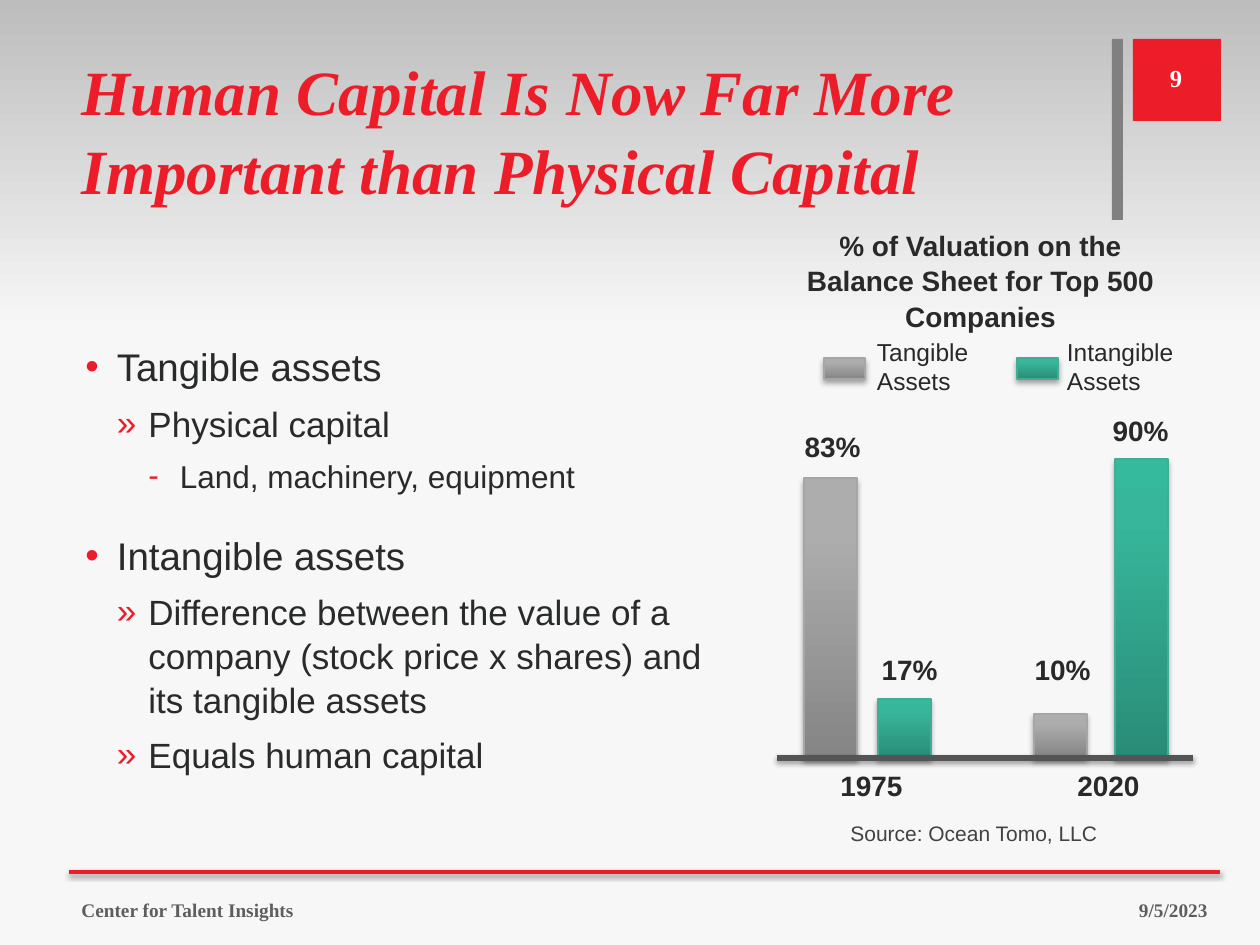
from lxml.etree import SubElement
from pptx import Presentation
from pptx.dml.color import RGBColor
from pptx.enum.shapes import MSO_CONNECTOR as Connector, MSO_SHAPE as Shape
from pptx.enum.text import MSO_ANCHOR as Anchor, PP_ALIGN as Align
from pptx.oxml.ns import qn
from pptx.util import Emu, Pt

RED = RGBColor(0xED, 0x1C, 0x29)
WHITE = RGBColor(0xFF, 0xFF, 0xFF)
BLACK = RGBColor(0x00, 0x00, 0x00)
BAR_GRAY = RGBColor(0x80, 0x80, 0x80)
FOOTER_GRAY = RGBColor(0x5E, 0x5E, 0x5E)
SOURCE_GRAY = RGBColor(0x42, 0x42, 0x42)
AXIS_GRAY = RGBColor(0x52, 0x54, 0x56)
BODY_INK = RGBColor(0x29, 0x2A, 0x2B)
CHART_INK = RGBColor(0x29, 0x29, 0x29)
BACKDROP = [(0, RGBColor(0xBD, 0xBD, 0xBD)), (35, RGBColor(0xF7, 0xF7, 0xF7)),
            (100, RGBColor(0xF8, 0xF8, 0xF8))]
TANGIBLE = {
    "stops": [(0, RGBColor(0x85, 0x85, 0x85)), (80, RGBColor(0xAD, 0xAD, 0xAD)),
              (100, RGBColor(0xAE, 0xAE, 0xAE))],
    "outline": RGBColor(0xA6, 0xA6, 0xA6)}
INTANGIBLE = {
    "stops": [(0, RGBColor(0x2A, 0x8C, 0x77)), (80, RGBColor(0x37, 0xB6, 0x9B)),
              (100, RGBColor(0x35, 0xBA, 0x9D))],
    "outline": RGBColor(0x44, 0xAC, 0x95)}

TITLE = "Human Capital Is Now Far More Important than Physical Capital"
BODY = [
    (0, "Tangible assets"),
    (1, "Physical capital"),
    (2, "Land, machinery, equipment"),
    (0, "Intangible assets"),
    (1, "Difference between the value of a company (stock price x shares) "
        "and its tangible assets"),
    (1, "Equals human capital"),
]
LEVELS = [("•", 22, 20), ("»", 20, 6), ("-", 18, 6)]

TITLE_FONT = {"name": "Times New Roman", "size": Pt(36), "bold": True, "italic": True}
NUMBER_FONT = {"name": "Times New Roman", "size": Pt(14), "bold": True}
FOOTER_FONT = {"name": "Times New Roman", "size": Pt(11), "bold": True}
CHART_FONT = {"name": "Arial", "size": Pt(16), "bold": True}
LEGEND_FONT = {"name": "Arial", "size": Pt(14)}
SOURCE_FONT = {"name": "Arial", "size": Pt(12)}

BASELINE, BAR_WIDTH, LABEL_HEIGHT = 758, 53, 34
BARS = [
    (TANGIBLE, 804, 478, "83%", (794, 430, 77)),
    (INTANGIBLE, 878, 699, "17%", (878, 653, 63)),
    (TANGIBLE, 1034, 714, "10%", (1024, 653, 77)),
    (INTANGIBLE, 1115, 459, "90%", (1102, 414, 77)),
]
YEARS = [("1975", 833), ("2020", 1070)]
LEGEND = [(TANGIBLE, 824, "Tangible Assets", 871, 126),
          (INTANGIBLE, 1017, "Intangible Assets", 1061, 151)]
FOOTERS = [
    ("9", (1134, 53, 84, 50), NUMBER_FONT, WHITE, Align.CENTER),
    ("Center for Talent Insights", (69, 885, 834, 50), FOOTER_FONT, FOOTER_GRAY, Align.LEFT),
    ("9/5/2023", (926, 885, 294, 50), FOOTER_FONT, FOOTER_GRAY, Align.RIGHT),
]


def px(value):
    return Emu(round(value * 914400 / 126))


def box(*values):
    return [px(value) for value in values]


def set_font(paragraph, font, color):
    for name, value in font.items():
        setattr(paragraph.font, name, value)
    paragraph.font.color.rgb = color


def add_color(parent, color):
    return SubElement(parent, qn("a:srgbClr"), val=str(color))


def add_shadow(shape, opacity, blur=3.1, distance=1.8):
    properties = shape._element.spPr
    effects = properties.find(qn("a:effectLst"))
    if effects is None:
        effects = SubElement(properties, qn("a:effectLst"))
    outer = SubElement(effects, qn("a:outerShdw"), blurRad=str(Pt(blur)),
                       dist=str(Pt(distance)), dir="5400000", rotWithShape="0")
    SubElement(add_color(outer, BLACK), qn("a:alpha"), val=str(opacity * 1000))


def add_block(slide, bounds, color=None, stops=(), angle=90, outline=None):
    shape = slide.shapes.add_shape(Shape.RECTANGLE, *box(*bounds))
    shape.shadow.inherit = False
    if stops:
        shape.fill.gradient()
        shape.fill.gradient_angle = angle
        stop_list = shape._element.spPr.find(".//" + qn("a:gsLst"))
        for stop in list(stop_list):
            stop_list.remove(stop)
        for position, stop_color in stops:
            add_color(SubElement(stop_list, qn("a:gs"), pos=str(position * 1000)), stop_color)
    else:
        shape.fill.solid()
        shape.fill.fore_color.rgb = color
    if outline is None:
        shape.line.fill.background()
    else:
        shape.line.color.rgb = outline
        shape.line.width = Pt(0.75)
        add_shadow(shape, 35)
    return shape


def add_rule(slide, left, right, y, color, width):
    line = slide.shapes.add_connector(Connector.STRAIGHT, *box(left, y, right, y))
    line.line.color.rgb = color
    line.line.width = Pt(width)
    add_shadow(line, 38, distance=1.6)


def add_text(slide, text, bounds, font, color, align=Align.CENTER, inset=None,
             anchor=Anchor.TOP, wrap=True, spacing=1.0):
    frame = slide.shapes.add_textbox(*box(*bounds)).text_frame
    frame.word_wrap = wrap
    frame.vertical_anchor = anchor
    if inset is not None:
        for side in ("left", "top", "right", "bottom"):
            setattr(frame, "margin_" + side, px(inset))
    paragraph = frame.paragraphs[0]
    paragraph.text = text
    paragraph.alignment = align
    paragraph.line_spacing = spacing
    set_font(paragraph, font, color)


def add_title(slide):
    title = slide.shapes.title
    title.left, title.top, title.width, title.height = box(69, 42, 1041, 181)
    title.text_frame.text = TITLE
    title.text_frame.vertical_anchor = Anchor.TOP
    paragraph = title.text_frame.paragraphs[0]
    paragraph.alignment = Align.LEFT
    paragraph.line_spacing = 1.05
    set_font(paragraph, TITLE_FONT, RED)


def add_body(slide):
    frame = slide.shapes.add_textbox(*box(73, 335, 651, 515)).text_frame
    frame.word_wrap = True
    for index, (level, text) in enumerate(BODY):
        bullet, size, space = LEVELS[level]
        paragraph = frame.add_paragraph() if index else frame.paragraphs[0]
        paragraph.text = text
        paragraph.level = level
        paragraph.line_spacing = 1.05
        paragraph.space_before = Pt(space if index else 0)
        properties = paragraph._p.get_or_add_pPr()
        properties.set("marL", str(px(31.5 * (level + 1))))
        properties.set("indent", str(px(-31.5)))
        add_color(SubElement(properties, qn("a:buClr")), RED)
        SubElement(properties, qn("a:buFont"), typeface="Arial")
        SubElement(properties, qn("a:buChar"), char=bullet)
        set_font(paragraph, {"name": "Arial", "size": Pt(size)}, BODY_INK)


def add_bars(slide):
    add_text(slide, "% of Valuation on the Balance Sheet for Top 500 Companies",
             (782, 221, 397, 115), CHART_FONT, CHART_INK, spacing=1.05)
    for series, left, top, label, (label_left, label_top, label_width) in BARS:
        add_block(slide, (left, top, BAR_WIDTH, BASELINE - top), **series)
        add_text(slide, label, (label_left, label_top, label_width, LABEL_HEIGHT),
                 CHART_FONT, CHART_INK, inset=0)
    for year, left in YEARS:
        add_text(slide, year, (left, 769, 77, LABEL_HEIGHT), CHART_FONT, CHART_INK, inset=0)
    for series, left, name, name_left, name_width in LEGEND:
        add_block(slide, (left, 358, 41, 21), **series)
        add_text(slide, name, (name_left, 331, name_width, 72), LEGEND_FONT, CHART_INK,
                 align=Align.LEFT, inset=6)
    add_rule(slide, 777, 1193, BASELINE, AXIS_GRAY, 3)
    add_text(slide, "Source: Ocean Tomo, LLC", (838, 814, 281, 38), SOURCE_FONT,
             SOURCE_GRAY, align=Align.LEFT, wrap=False)


def main():
    presentation = Presentation()
    presentation.slide_width, presentation.slide_height = box(1260, 945)
    slide = presentation.slides.add_slide(presentation.slide_layouts[5])
    backdrop = add_block(slide, (0, 0, 1260, 945), stops=BACKDROP, angle=270)
    slide.shapes._spTree.insert(2, backdrop._element)
    add_title(slide)
    add_block(slide, (1133, 39, 88, 82), RED)
    add_block(slide, (1112, 39, 11, 181), BAR_GRAY)
    add_rule(slide, 69, 1220, 872, RED, 2)
    add_body(slide)
    for text, bounds, font, color, align in FOOTERS:
        add_text(slide, text, bounds, font, color, align, anchor=Anchor.MIDDLE)
    add_bars(slide)
    presentation.save("out.pptx")


if __name__ == "__main__":
    main()
